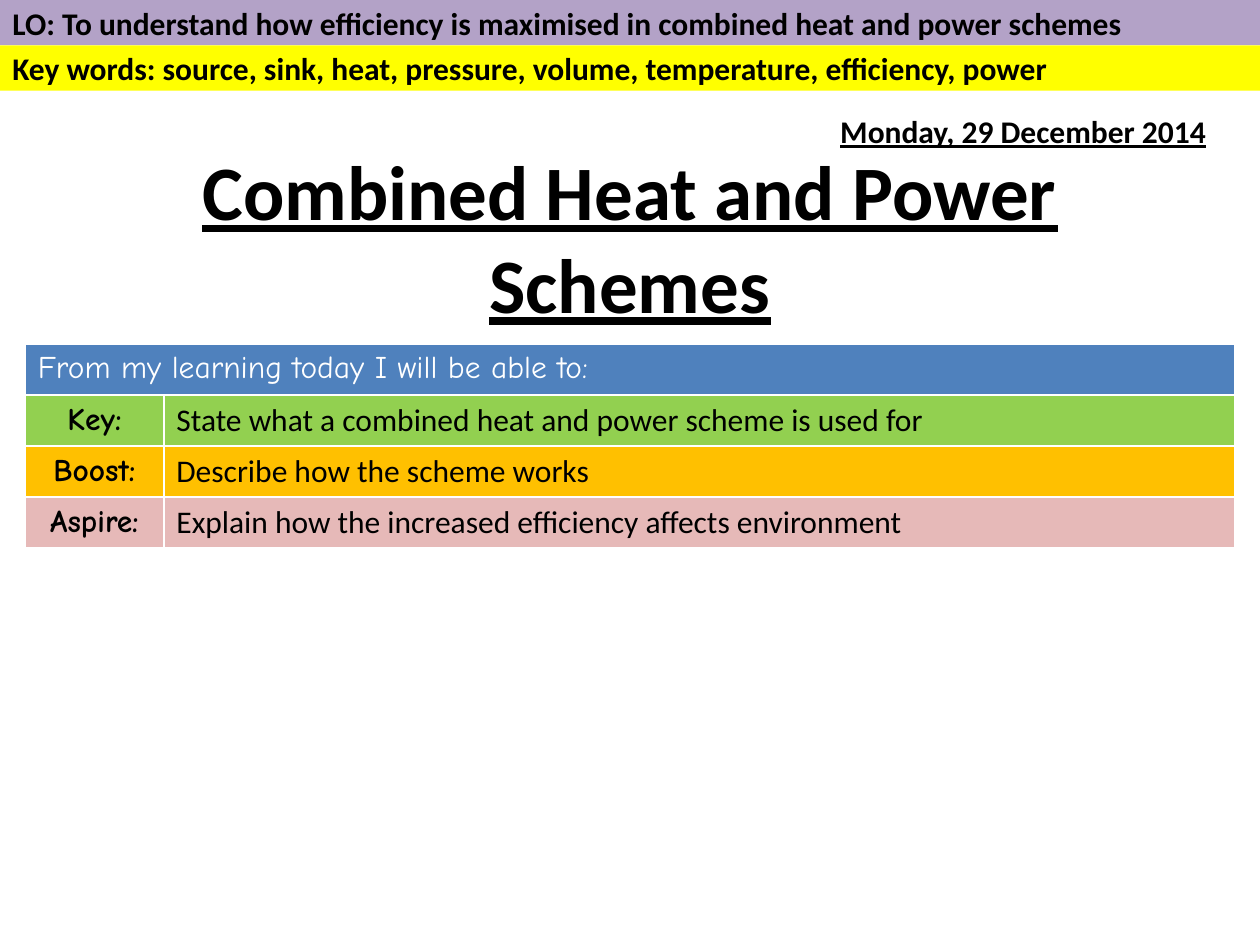
from dataclasses import dataclass

from lxml.etree import SubElement
from pptx import Presentation
from pptx.dml.color import RGBColor
from pptx.enum.shapes import MSO_SHAPE
from pptx.enum.text import MSO_ANCHOR, MSO_AUTO_SIZE, PP_ALIGN
from pptx.oxml.ns import qn
from pptx.util import Inches, Pt


@dataclass(frozen=True)
class Theme:
    """Colours, fonts and type sizes of the lesson slide."""
    ink: str = "000000"
    paper: str = "FFFFFF"
    objective: str = "B3A2C7"
    keywords: str = "FFFF00"
    header: str = "4F81BD"
    key: str = "92D050"
    boost: str = "FFC000"
    aspire: str = "E6B9B8"
    body_font: str = "Calibri"
    label_font: str = "Comic Neue"
    title_size: int = 44
    body_size: int = 18
    border_width: int = 1


THEME = Theme()


def write_text(frame, text, align=PP_ALIGN.LEFT, color=THEME.ink, **formats):
    """Fill a text frame with one formatted paragraph."""
    para = frame.paragraphs[0]
    para.alignment = align
    span = para.add_run()
    span.text = text
    settings = {"name": THEME.body_font, "size": Pt(THEME.body_size), "bold": True} | formats
    for name, value in settings.items():
        setattr(span.font, name, value)
    span.font.color.rgb = RGBColor.from_string(color)


def add_banners(page, left, top, width, height, banners):
    """Stack full-width coloured banners of equal height."""
    for index, (text, color) in enumerate(banners):
        banner = page.shapes.add_shape(
            MSO_SHAPE.RECTANGLE, left, top + index * height, width, height)
        banner.shadow.inherit = False
        banner.fill.solid()
        banner.fill.fore_color.rgb = RGBColor.from_string(color)
        banner.line.fill.background()
        banner.text_frame.word_wrap = True
        banner.text_frame.vertical_anchor = MSO_ANCHOR.MIDDLE
        write_text(banner.text_frame, text)


def place_title(page, left, top, width, height, text):
    """Move and format the title placeholder."""
    title = page.shapes.title
    box = {"left": left, "top": top, "width": width, "height": height}
    for name, value in box.items():
        setattr(title, name, value)
    title.text_frame.auto_size = MSO_AUTO_SIZE.NONE
    title.text_frame.vertical_anchor = MSO_ANCHOR.MIDDLE
    write_text(title.text_frame, text, PP_ALIGN.CENTER,
               size=Pt(THEME.title_size), underline=True)


def add_date(page, left, top, width, height, text):
    """Add the underlined lesson date."""
    frame = page.shapes.add_textbox(left, top, width, height).text_frame
    frame.word_wrap = True
    frame.auto_size = MSO_AUTO_SIZE.SHAPE_TO_FIT_TEXT
    write_text(frame, text, underline=True)


def style_cell(cell, color):
    """Give a cell thin light borders and a solid fill."""
    properties = cell._tc.get_or_add_tcPr()
    for side in ("lnL", "lnR", "lnT", "lnB"):
        line = SubElement(properties, qn(f"a:{side}"), w=str(Pt(THEME.border_width)))
        fill = SubElement(line, qn("a:solidFill"))
        SubElement(fill, qn("a:srgbClr"), val=THEME.paper)
    cell.fill.solid()
    cell.fill.fore_color.rgb = RGBColor.from_string(color)


def add_outcomes(page, left, top, width, height, heading, outcomes):
    """Add the table of graded learning outcomes under a merged heading."""
    row_count = len(outcomes) + 1
    table = page.shapes.add_table(row_count, 2, left, top, width, height).table
    label_width = Inches(1.1)
    for column, column_width in zip(table.columns, (label_width, width - label_width)):
        column.width = column_width
    for row in table.rows:
        row.height = height // row_count
    for cell in table.rows[0].cells:
        style_cell(cell, THEME.header)
    table.cell(0, 0).merge(table.cell(0, 1))
    write_text(table.cell(0, 0).text_frame, heading, color=THEME.paper,
               name=THEME.label_font, bold=False)
    for index, (label, outcome, color) in enumerate(outcomes, start=1):
        label_cell, outcome_cell = table.rows[index].cells
        for cell in (label_cell, outcome_cell):
            style_cell(cell, color)
        label_cell.vertical_anchor = MSO_ANCHOR.MIDDLE
        write_text(label_cell.text_frame, label, PP_ALIGN.CENTER, name=THEME.label_font)
        write_text(outcome_cell.text_frame, outcome, bold=False)


def main():
    """Build and save the lesson slide."""
    deck = Presentation()
    deck.slide_width, deck.slide_height = Inches(10), Inches(7.5)
    page = deck.slides.add_slide(deck.slide_layouts[0])
    subtitle = page.placeholders[1].element
    subtitle.getparent().remove(subtitle)

    add_banners(page, Inches(0), Inches(0), deck.slide_width, Inches(0.36), [
        ("LO: To understand how efficiency is maximised in combined heat and power schemes",
         THEME.objective),
        ("Key words: source, sink, heat, pressure, volume, temperature, efficiency, power",
         THEME.keywords),
    ])
    place_title(page, Inches(0.75), Inches(1.07), Inches(8.5), Inches(1.61),
                "Combined Heat and Power Schemes")
    add_date(page, Inches(6.57), Inches(0.84), Inches(3.15), Inches(0.4),
             "Monday, 29 December 2014")
    add_outcomes(page, Inches(0.2), Inches(2.73), Inches(9.6), Inches(1.62),
                 "From my learning today I will be able to:", [
        ("Key:", "State what a combined heat and power scheme is used for", THEME.key),
        ("Boost:", "Describe how the scheme works", THEME.boost),
        ("Aspire:", "Explain how the increased efficiency affects environment", THEME.aspire),
    ])
    deck.save("out.pptx")


if __name__ == "__main__":
    main()
